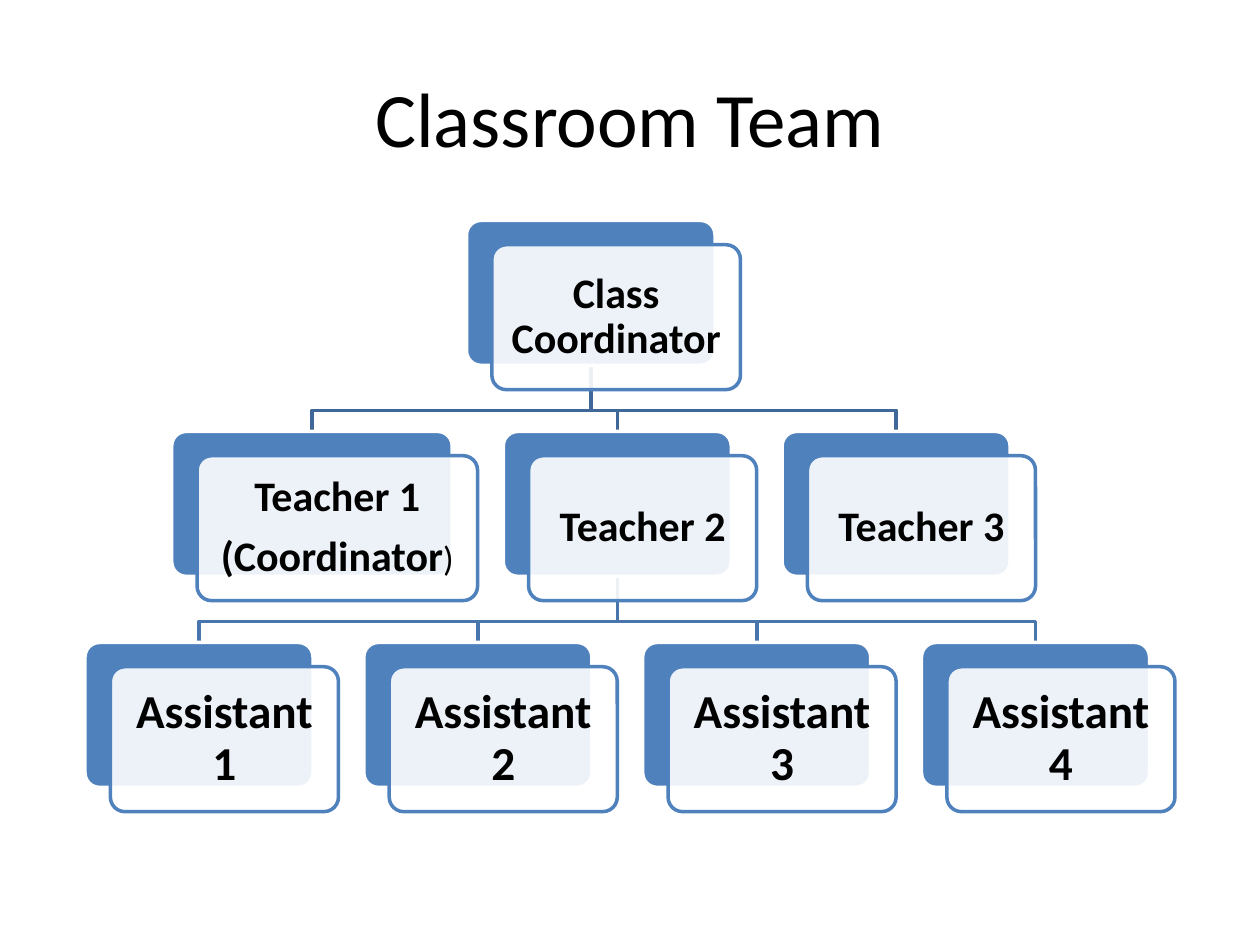
import dataclasses

import lxml.etree
import pptx
import pptx.dml.color
import pptx.enum.shapes
import pptx.enum.text
import pptx.oxml.ns
import pptx.util


@dataclasses.dataclass
class Theme:
    font: str = "Calibri"
    text: str = "000000"
    paper: str = "FFFFFF"
    accent: str = "4F81BD"
    upper_link: str = "3F6797"
    lower_link: str = "4875AC"
    title_size: int = 44
    teacher_size: int = 24
    assistant_size: int = 27
    small_size: int = 20
    line_width: int = 2
    card_opacity: int = 90


theme = Theme()
color = pptx.dml.color.RGBColor.from_string
inches = pptx.util.Inches

presentation = pptx.Presentation()
presentation.slide_width = inches(10)
presentation.slide_height = inches(7.5)
slide = presentation.slides.add_slide(presentation.slide_layouts[6])

column_width = presentation.slide_width * 0.2213
row_height = presentation.slide_height * 0.2233
left_center = presentation.slide_width * 0.158
first_top = presentation.slide_height * 0.2333
card_height = row_height * 0.687
card_width = column_width * 0.818
shift_x = column_width * 0.091
shift_y = row_height * 0.115
bend = row_height * 0.9


def add_run(paragraph, text, size, bold):
    run = paragraph.add_run()
    run.text = text
    run.font.name = theme.font
    run.font.size = pptx.util.Pt(size)
    run.font.bold = bold
    run.font.color.rgb = color(theme.text)


def add_box(left, top, width, fill, line):
    box = slide.shapes.add_shape(
        pptx.enum.shapes.MSO_SHAPE.ROUNDED_RECTANGLE,
        round(left), round(top), round(width), round(card_height))
    box.adjustments[0] = 0.1
    box.shadow.inherit = False
    box.fill.solid()
    box.fill.fore_color.rgb = color(fill)
    box.line.color.rgb = color(line)
    box.line.width = pptx.util.Pt(theme.line_width)
    return box


title = slide.shapes.add_textbox(
    round(presentation.slide_width * 0.05), round(presentation.slide_height * 0.04),
    round(presentation.slide_width * 0.9), round(presentation.slide_height / 6))
title.text_frame.word_wrap = True
title.text_frame.vertical_anchor = pptx.enum.text.MSO_ANCHOR.MIDDLE
title.text_frame.paragraphs[0].alignment = pptx.enum.text.PP_ALIGN.CENTER
add_run(title.text_frame.paragraphs[0], "Classroom Team", theme.title_size, False)

links = [
    (0, 1.405, [2.5, 1.5, 0.405], theme.upper_link),
    (1, 1.5, [3, 2, 1, 0], theme.lower_link),
]
for row, parent, children, link_color in links:
    parent_x = left_center + parent * column_width
    top = first_top + row * row_height
    for child in children:
        child_x = left_center + child * column_width
        builder = slide.shapes.build_freeform(round(parent_x), round(top + card_height))
        builder.add_line_segments([
            (round(parent_x), round(top + bend)),
            (round(child_x), round(top + bend)),
            (round(child_x), round(top + row_height)),
        ], close=False)
        link = builder.convert_to_shape()
        link.shadow.inherit = False
        link.fill.background()
        link.line.color.rgb = color(link_color)
        link.line.width = pptx.util.Pt(theme.line_width)

teacher, assistant, small = theme.teacher_size, theme.assistant_size, theme.small_size
cards = [
    (0, 1.405, 1.09, [[("Class Coordinator", teacher, True)]]),
    (1, 0.405, 1.23, [[("Teacher 1", teacher, True)],
                      [("(Coordinator", teacher, True), (")", small, False)]]),
    (1, 1.5, 1, [[("Teacher 2", teacher, True)]]),
    (1, 2.5, 1, [[("Teacher 3", teacher, True)]]),
]
for column in range(4):
    cards.append((2, column, 1, [[(f"Assistant {column + 1}", assistant, True)]]))

for row, column, stretch, paragraphs in cards:
    width = card_width * stretch
    left = left_center + column * column_width - width / 2
    top = first_top + row * row_height
    add_box(left, top, width, theme.accent, theme.paper)
    card = add_box(left + shift_x, top + shift_y, width, theme.paper, theme.accent)
    fill_color = card.fill._xPr.find(".//" + pptx.oxml.ns.qn("a:srgbClr"))
    alpha = lxml.etree.SubElement(fill_color, pptx.oxml.ns.qn("a:alpha"))
    alpha.set("val", str(theme.card_opacity * 1000))

    frame = card.text_frame
    frame.word_wrap = True
    frame.vertical_anchor = pptx.enum.text.MSO_ANCHOR.MIDDLE
    inset = pptx.util.Pt(paragraphs[0][0][1] * 0.3)
    frame.margin_left = frame.margin_right = inset
    frame.margin_top = frame.margin_bottom = inset
    for index, runs in enumerate(paragraphs):
        paragraph = frame.add_paragraph() if index else frame.paragraphs[0]
        paragraph.alignment = pptx.enum.text.PP_ALIGN.CENTER
        paragraph.line_spacing = 0.9
        paragraph.space_after = pptx.util.Pt(runs[0][1] * 0.35)
        for text, size, bold in runs:
            add_run(paragraph, text, size, bold)

presentation.save("out.pptx")
